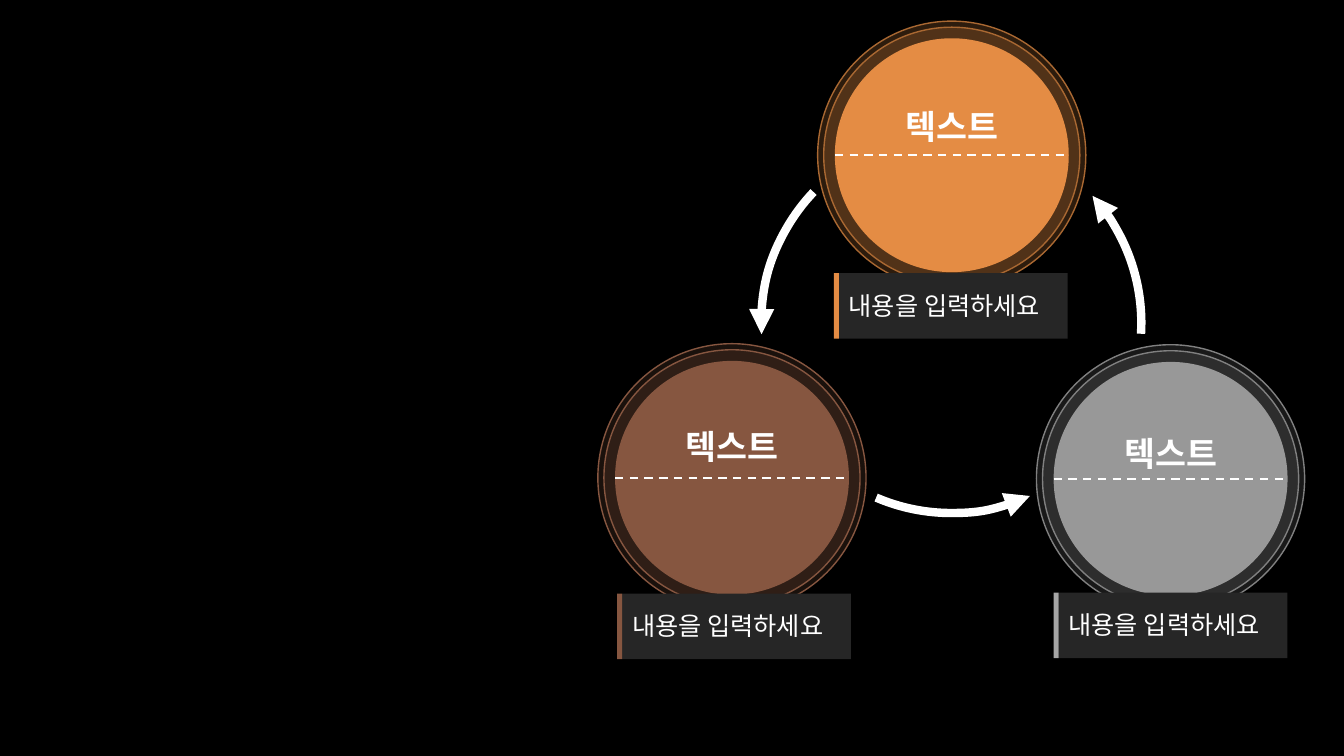
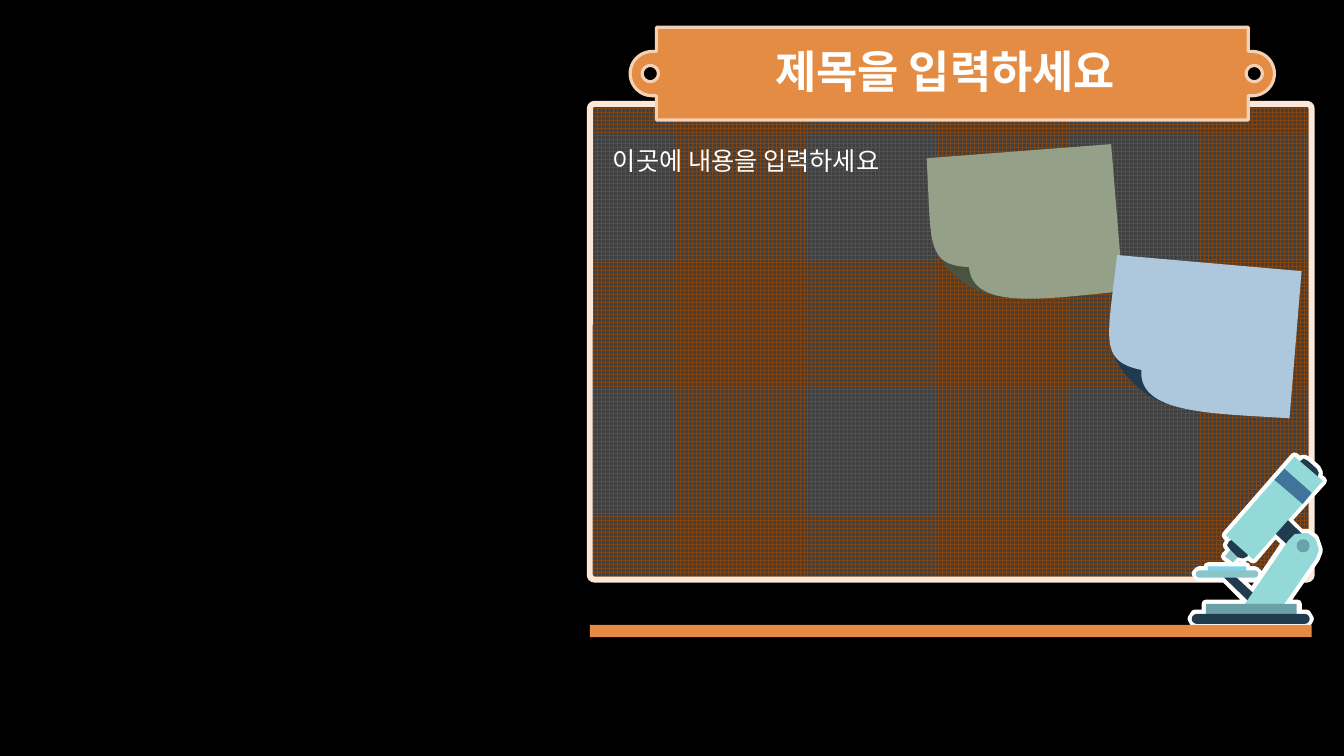
from math import cos, radians, sin

from lxml.etree import SubElement
from pptx import Presentation
from pptx.dml.color import RGBColor
from pptx.enum.dml import MSO_LINE, MSO_PATTERN
from pptx.enum.shapes import MSO_CONNECTOR, MSO_SHAPE
from pptx.enum.text import MSO_ANCHOR, MSO_AUTO_SIZE, PP_ALIGN
from pptx.oxml.ns import qn
from pptx.util import Inches, Pt

BLACK = RGBColor(0x00, 0x00, 0x00)
WHITE = RGBColor(0xFF, 0xFF, 0xFF)
ORANGE = RGBColor(0xE4, 0x8C, 0x44)
DARK_ORANGE = RGBColor(0xA9, 0x68, 0x32)
BROWN = RGBColor(0x86, 0x56, 0x40)
GRAY = RGBColor(0x80, 0x80, 0x80)
LIGHT_GRAY = RGBColor(0xA6, 0xA6, 0xA6)
PANEL = RGBColor(0x26, 0x26, 0x26)
GRID_LINE = RGBColor(0x81, 0x44, 0x13)
GRID_BACK = RGBColor(0x40, 0x40, 0x40)
CREAM = RGBColor(0xFA, 0xE8, 0xDA)
PEACH = RGBColor(0xF4, 0xD1, 0xB4)
SAGE = RGBColor(0x94, 0xA0, 0x88)
DARK_SAGE = RGBColor(0x4A, 0x52, 0x42)
PALE_BLUE = RGBColor(0xAD, 0xC8, 0xDD)
NAVY = RGBColor(0x20, 0x3A, 0x4E)
BLUE = RGBColor(0x40, 0x74, 0x9B)
SKY = RGBColor(0x7D, 0xD2, 0xED)
MINT = RGBColor(0x92, 0xD9, 0xD7)
TEAL = RGBColor(0x8A, 0xC6, 0xC9)
DARK_TEAL = RGBColor(0x6C, 0xA0, 0xA9)
KNOB = RGBColor(0x6A, 0xA2, 0xAC)

HEADING_FONT, BODY_FONT = "Arial", "Calibri"

# Cycle slide: centre, heading top, label corner, ring fill, ring line, disc fill and opacity, accent
CYCLE_NODES = [
    dict(heading="텍스트", caption="내용을 입력하세요", center=(7.26, 4.74), heading_top=4.18,
         label=(6.12, 5.89), ring=BROWN, ring_line=BROWN, disc=BROWN, opacity=100, accent=BROWN),
    dict(heading="텍스트", caption="내용을 입력하세요", center=(9.44, 1.54), heading_top=1,
         label=(8.27, 2.71), ring=ORANGE, ring_line=DARK_ORANGE, disc=ORANGE, opacity=100,
         accent=ORANGE),
    dict(heading="텍스트", caption="내용을 입력하세요", center=(11.61, 4.75), heading_top=4.25,
         label=(10.45, 5.88), ring=GRAY, ring_line=GRAY, disc=WHITE, opacity=51,
         accent=LIGHT_GRAY),
]
RING_DIAMETERS = (2.66, 2.54)
DISC_DIAMETER = 2.32
LABEL_WIDTH, LABEL_HEIGHT, ACCENT_WIDTH = 2.27, 0.65, 0.05
ARROW_CIRCLE = (7.55, 1.32, 3.77, 3.77)
ARROW_ANGLES = [(318, 3.24), (65.55, 113.27), (176.62, 223.58)]

# Board slide
BOARD_TITLE = "제목을 입력하세요"
BOARD_TEXT = "이곳에 내용을 입력하세요"
BOARD_LEFT, BOARD_WIDTH = 5.85, 7.16
BANNER = (6.51, 0.27, 12.38, 1.19)
# Sheet outline: start, then straight points or (control, control, end) curves
NOTES = [
    dict(sheet=SAGE, curl=DARK_SAGE, curl_box=(9.2, 2.35, 0.98, 0.49), curl_angle=35.3,
         start=(9.19, 1.57), steps=[
             (11.02, 1.43), ((11.06, 1.91), (11.1, 2.41), (11.14, 2.89)),
             ((10.38, 2.96), (9.65, 3.09), (9.61, 2.65)),
             ((9.17, 2.63), (9.24, 2.39), (9.19, 1.57))]),
    dict(sheet=PALE_BLUE, curl=NAVY, curl_box=(10.92, 3.38, 0.98, 0.49), curl_angle=44.5,
         start=(11.08, 2.53), steps=[
             (12.91, 2.69), ((12.87, 3.17), (12.83, 3.67), (12.79, 4.15)),
             ((12.03, 4.1), (11.29, 4.11), (11.32, 3.67)),
             ((10.89, 3.58), (10.99, 3.35), (11.08, 2.53))]),
]
MICROSCOPE_OUTLINE = [
    (12.84, 4.53), (12.89, 4.57), (12.93, 4.55), (12.97, 4.57), (13.06, 4.65), (13.08, 4.69),
    (13.07, 4.73), (13.12, 4.77), (12.77, 5.16), (12.9, 5.29), (12.97, 5.29), (13.04, 5.34),
    (13.08, 5.46), (13.05, 5.54), (12.74, 5.99), (12.87, 5.99), (12.87, 6.09), (12.96, 6.09),
    (12.99, 6.14), (12.96, 6.19), (11.85, 6.19), (11.82, 6.14), (11.85, 6.09), (11.96, 6.09),
    (11.96, 5.99), (12.35, 5.99), (12.37, 5.96), (12.14, 5.73), (11.89, 5.73), (11.86, 5.69),
    (11.89, 5.66), (11.98, 5.66), (11.98, 5.62), (12.36, 5.62), (12.36, 5.66), (12.45, 5.66),
    (12.48, 5.69), (12.45, 5.73), (12.27, 5.73), (12.42, 5.88), (12.75, 5.39), (12.65, 5.29),
    (12.43, 5.55), (12.38, 5.51), (12.33, 5.54), (12.28, 5.52), (12.23, 5.58), (12.15, 5.52),
    (12.21, 5.46), (12.17, 5.41), (12.2, 5.36), (12.16, 5.31)]
# Back to front: a list of points is an outline, a (preset, box) pair is a preset shape
MICROSCOPE_PARTS = [
    (NAVY, [(12.68, 5.07), (13, 5.38), (12.88, 5.51), (12.55, 5.2)]),
    (NAVY, [(12.21, 5.68), (12.5, 5.95), (12.44, 6.02), (12.12, 5.71)]),
    (MINT, [(12.92, 5.29), (12.97, 5.29), (13, 5.31), (13.04, 5.34), (13.06, 5.38),
            (13.08, 5.46), (13.05, 5.54), (12.69, 6.06), (12.3, 6.06), (12.78, 5.36),
            (12.84, 5.3)]),
    (SKY, (MSO_SHAPE.RECTANGLE, (11.98, 5.62, 0.38, 0.06))),
    (KNOB, (MSO_SHAPE.OVAL, (12.86, 5.35, 0.13, 0.13))),
    (DARK_TEAL, (MSO_SHAPE.RECTANGLE, (11.96, 5.99, 0.9, 0.12))),
    (TEAL, (MSO_SHAPE.ROUNDED_RECTANGLE, (11.86, 5.66, 0.62, 0.07))),
    (NAVY, [(12.93, 4.55), (12.97, 4.57), (13.06, 4.65), (13.08, 4.69), (13.07, 4.73),
            (13.03, 4.75), (12.98, 4.74), (12.9, 4.66), (12.88, 4.62), (12.89, 4.58)]),
    (TEAL, [(12.24, 5.41), (12.32, 5.48), (12.23, 5.58), (12.15, 5.52)]),
    (NAVY, [(12.23, 5.35), (12.28, 5.36), (12.37, 5.44), (12.39, 5.48), (12.37, 5.52),
            (12.33, 5.54), (12.28, 5.53), (12.2, 5.45), (12.17, 5.41), (12.19, 5.37)]),
    (MINT, [(12.84, 4.53), (13.12, 4.77), (12.43, 5.55), (12.16, 5.31)]),
    (BLUE, [(12.74, 4.65), (13.01, 4.89), (12.92, 5), (12.64, 4.76)]),
    (NAVY, (MSO_SHAPE.ROUNDED_RECTANGLE, (11.82, 6.09, 1.17, 0.1))),
]


def inches(lengths):
    return [Inches(length) for length in lengths]


def paint(shape, fill=None, line=None, width=1, opacity=100):
    shape.shadow.inherit = False
    if fill is None:
        shape.fill.background()
    else:
        shape.fill.solid()
        shape.fill.fore_color.rgb = fill
        if opacity < 100:
            color = shape.element.spPr.find(qn("a:solidFill"))[0]
            SubElement(color, qn("a:alpha"), val=str(opacity * 1000))
    if line is None:
        shape.line.fill.background()
    else:
        shape.line.color.rgb = line
        shape.line.width = Pt(width)
    return shape


def add_preset(shapes, preset, box, **look):
    return paint(shapes.add_shape(preset, *inches(box)), **look)


def add_outline(shapes, contours, **look):
    """Draw closed contours, given in inches, as one freeform."""
    first, *others = [[inches(point) for point in contour] for contour in contours]
    builder = shapes.build_freeform(*first[0])
    builder.add_line_segments(first[1:], close=True)
    for contour in others:
        builder.move_to(*contour[0])
        builder.add_line_segments(contour[1:], close=True)
    return paint(builder.convert_to_shape(), **look)


def format_text(text_frame, text, font, size, bold=False, align=PP_ALIGN.LEFT):
    text_frame.text = text
    paragraph = text_frame.paragraphs[0]
    paragraph.alignment = align
    run_font = paragraph.runs[0].font
    run_font.name, run_font.size, run_font.bold = font, Pt(size), bold
    run_font.color.rgb = WHITE
    return paragraph


def add_text(shapes, box, text, font, size, wrap=False, **style):
    text_frame = shapes.add_textbox(*inches(box)).text_frame
    text_frame.word_wrap = wrap
    text_frame.auto_size = MSO_AUTO_SIZE.SHAPE_TO_FIT_TEXT
    format_text(text_frame, text, font, size, **style)


def add_caption(shapes, left, top, width, text):
    add_text(shapes, (left, top, width, 0.4), text, BODY_FONT, 18)


def circle_box(center, diameter):
    return (center[0] - diameter / 2, center[1] - diameter / 2, diameter, diameter)


def arc_points(center, radius, start, end, steps=24):
    angles = [radians(start + (end - start) * step / steps) for step in range(steps + 1)]
    return [(center[0] + radius * cos(angle), center[1] + radius * sin(angle))
            for angle in angles]


def curve_points(start, first, second, end, steps=24):
    """Points after the start of a cubic Bézier curve."""
    points = []
    for step in range(1, steps + 1):
        t = step / steps
        weights = ((1 - t) ** 3, 3 * t * (1 - t) ** 2, 3 * t * t * (1 - t), t ** 3)
        points.append(tuple(sum(weight * point[axis] for weight, point
                                in zip(weights, (start, first, second, end)))
                            for axis in (0, 1)))
    return points


def add_cycle_node(slide, node):
    shapes = slide.shapes.add_group_shape().shapes
    center = node["center"]
    for diameter in RING_DIAMETERS:
        add_preset(shapes, MSO_SHAPE.OVAL, circle_box(center, diameter),
                   fill=node["ring"], line=node["ring_line"], opacity=20)
    disc = circle_box(center, DISC_DIAMETER)
    add_preset(shapes, MSO_SHAPE.OVAL, disc, fill=node["disc"], opacity=node["opacity"])
    add_text(shapes, (disc[0], node["heading_top"], DISC_DIAMETER, 0.44), node["heading"],
             HEADING_FONT, 24, wrap=True, bold=True, align=PP_ALIGN.CENTER)

    divider = shapes.add_connector(MSO_CONNECTOR.STRAIGHT, *inches(
        (disc[0], center[1], disc[0] + DISC_DIAMETER, center[1])))
    divider.line.color.rgb = WHITE
    divider.line.width = Pt(1.5)
    divider.line.dash_style = MSO_LINE.DASH
    SubElement(divider.element.spPr, qn("a:effectLst"))

    left, top = node["label"]
    panel_left = left + ACCENT_WIDTH
    add_preset(shapes, MSO_SHAPE.RECTANGLE, (panel_left, top, LABEL_WIDTH, LABEL_HEIGHT),
               fill=PANEL)
    add_preset(shapes, MSO_SHAPE.RECTANGLE, (left, top, ACCENT_WIDTH, LABEL_HEIGHT),
               fill=node["accent"])
    add_caption(shapes, panel_left, top + 0.12, 2.28, node["caption"])


def add_cycle_arrow(slide, angles):
    arrow = add_preset(slide.shapes, MSO_SHAPE.ARC, ARROW_CIRCLE, line=WHITE, width=6)
    for index, angle in enumerate(angles):
        arrow.adjustments[index] = angle * 0.6  # 60000 units a degree, scaled by 100000
    SubElement(arrow.element.spPr.find(qn("a:ln")), qn("a:headEnd"), type="triangle")


def add_banner(slide):
    left, top, right, bottom = BANNER
    middle, ear = (top + bottom) / 2, 0.22
    body = [(left, top), (right, top), (right, middle - ear),
            *arc_points((right + 0.04, middle), ear, -90, 90),
            (right, middle + ear), (right, bottom), (left, bottom), (left, middle + ear),
            *arc_points((left - 0.04, middle), ear, 90, 270), (left, middle - ear)]
    holes = [arc_points((x, middle), 0.08, 0, 360) for x in (left - 0.06, right + 0.06)]
    add_outline(slide.shapes, [body, *holes], fill=ORANGE, line=PEACH, width=2.25)


def add_microscope(slide):
    shapes = slide.shapes.add_group_shape().shapes
    add_outline(shapes, [MICROSCOPE_OUTLINE], fill=WHITE, line=WHITE, width=6)
    for color, part in MICROSCOPE_PARTS:
        if isinstance(part, list):
            add_outline(shapes, [part], fill=color)
        else:
            preset, box = part
            shape = add_preset(shapes, preset, box, fill=color)
            if preset == MSO_SHAPE.ROUNDED_RECTANGLE:
                shape.adjustments[0] = 0.5


def add_note(slide, note):
    shapes = slide.shapes.add_group_shape().shapes
    curl = add_preset(shapes, MSO_SHAPE.OVAL, note["curl_box"], fill=note["curl"])
    curl.rotation = note["curl_angle"]
    points = [note["start"]]
    for step in note["steps"]:
        points += curve_points(points[-1], *step) if len(step) == 3 else [step]
    add_outline(shapes, [points], fill=note["sheet"])


def build_cycle_slide(presentation):
    slide = presentation.slides.add_slide(presentation.slide_layouts[6])
    for node in CYCLE_NODES:
        add_cycle_node(slide, node)
    for angles in ARROW_ANGLES:
        add_cycle_arrow(slide, angles)


def build_board_slide(presentation):
    slide = presentation.slides.add_slide(presentation.slide_layouts[5])
    board = add_preset(slide.shapes, MSO_SHAPE.ROUNDED_RECTANGLE,
                       (BOARD_LEFT, 1.03, BOARD_WIDTH, 4.72), line=CREAM, width=4.25)
    board.adjustments[0] = 0.01
    board.fill.patterned()
    board.fill.pattern = MSO_PATTERN.LARGE_GRID
    board.fill.fore_color.rgb = GRID_LINE
    board.fill.back_color.rgb = GRID_BACK
    add_banner(slide)
    add_microscope(slide)

    title = slide.shapes.title
    title.left, title.top, title.width, title.height = inches((6.48, 0.4, 5.79, 0.66))
    title.text_frame.vertical_anchor = MSO_ANCHOR.MIDDLE
    paragraph = format_text(title.text_frame, BOARD_TITLE, HEADING_FONT, 32, bold=True,
                            align=PP_ALIGN.CENTER)
    paragraph.line_spacing = 0.9
    title.element.getparent().append(title.element)  # in front of the banner

    for note in NOTES:
        add_note(slide, note)
    add_caption(slide.shapes, 5.98, 1.39, 3.09, BOARD_TEXT)
    add_preset(slide.shapes, MSO_SHAPE.RECTANGLE, (BOARD_LEFT, 6.2, BOARD_WIDTH, 0.12),
               fill=ORANGE)


def main():
    presentation = Presentation()
    presentation.slide_width, presentation.slide_height = inches((13.33, 7.5))
    background = presentation.slide_master.background.fill
    background.solid()
    background.fore_color.rgb = BLACK
    build_cycle_slide(presentation)
    build_board_slide(presentation)
    presentation.save("out.pptx")


if __name__ == "__main__":
    main()
